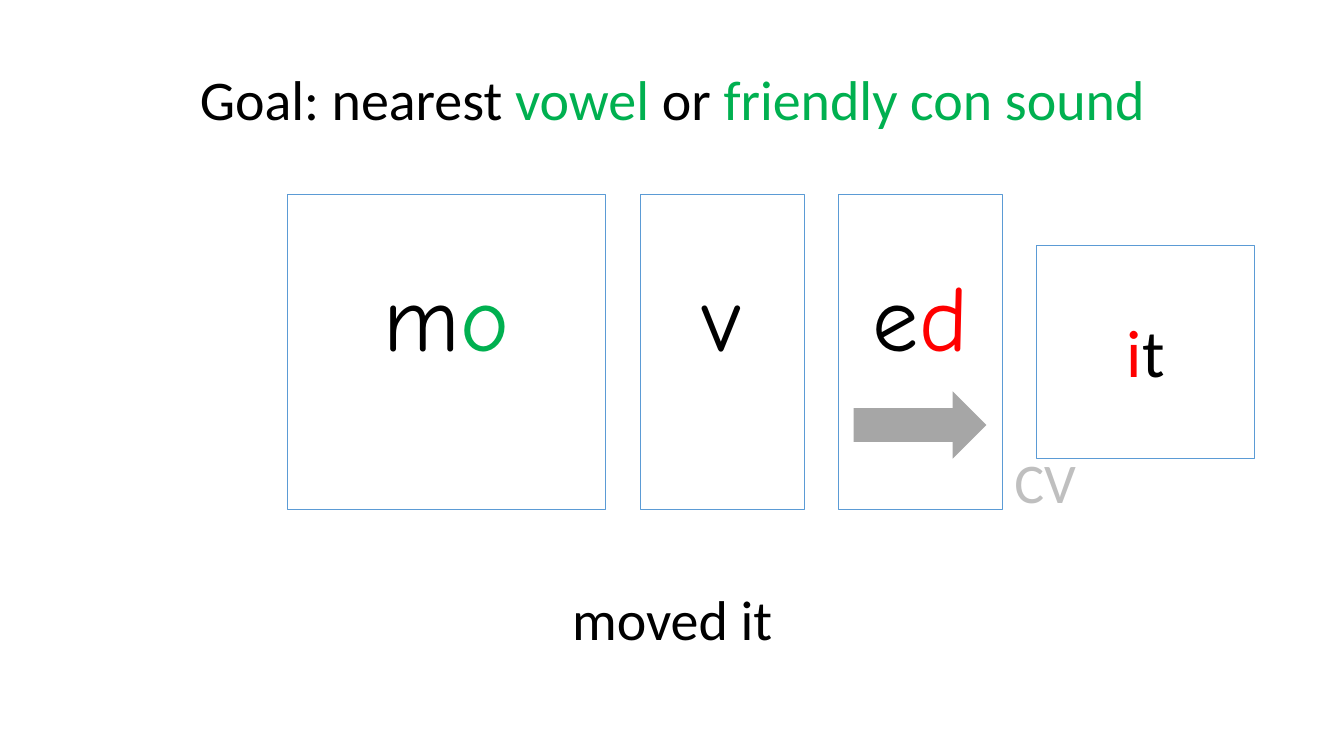
from pptx import Presentation
from pptx.dml.color import RGBColor
from pptx.enum.shapes import MSO_SHAPE
from pptx.enum.text import MSO_ANCHOR, PP_ALIGN
from pptx.util import Cm, Pt

RECTANGLE, RIGHT_ARROW = MSO_SHAPE.RECTANGLE, MSO_SHAPE.RIGHT_ARROW
TOP, CENTER = MSO_ANCHOR.TOP, PP_ALIGN.CENTER

BLACK = RGBColor(0x00, 0x00, 0x00)
GREEN = RGBColor(0x00, 0xB0, 0x50)
RED = RGBColor(0xFF, 0x00, 0x00)
PALE_GRAY = RGBColor(0xBF, 0xBF, 0xBF)
ARROW_GRAY = RGBColor(0xA6, 0xA6, 0xA6)
BORDER_BLUE = RGBColor(0x5B, 0x9B, 0xD5)

PLAIN, LETTERS = "Calibri", "Comic Neue"

# Content: texts are lists of (words, colour); places are left, top, width, height in cm
GOAL = [("Goal: nearest ", BLACK), ("vowel", GREEN),
        (" or ", BLACK), ("friendly con sound", GREEN)]
GOAL_PLACE = (1.8, 1.5, 30.28, 1.96)

# Sound cards: width, height, font, size, text
SOUND_CARDS = [
    (8.03, 7.95, LETTERS, 66, [("m", BLACK), ("o", GREEN)]),
    (4.14, 7.95, LETTERS, 66, [("v", BLACK)]),
    (4.14, 7.95, LETTERS, 66, [("e", BLACK), ("d", RED)]),
    (5.49, 5.38, PLAIN, 48, [("i", RED), ("t", BLACK)]),
]
CARDS_LEFT, CARDS_MIDDLE, CARD_GAP = 7.24, 8.87, 0.86
CARD_TEXT_DROP = 1.64

# The blend label sits clear of the card borders, beside the "ed" card
CAPTIONS = [
    ([("moved it", BLACK)], (12.42, 14.6, 9.04, 1.96)),
    ([("CV", PALE_GRAY)], (23.8, 11.15, 5.08, 1.96)),
]
BLEND_ARROW_PLACE = (21.51, 9.86, 3.35, 1.7)


def lengths(place):
    return [Cm(value) for value in place]


def write(frame, pieces, font, size):
    """Fill a frame with one centred line of coloured pieces."""
    frame.word_wrap = True
    frame.vertical_anchor = TOP
    line = frame.paragraphs[0]
    line.alignment = CENTER
    for words, color in pieces:
        run = line.add_run()
        run.text = words
        run.font.name = font
        run.font.size = Pt(size)
        run.font.color.rgb = color


deck = Presentation()
deck.slide_width, deck.slide_height = Cm(33.87), Cm(19.05)
slide = deck.slides.add_slide(deck.slide_layouts[5])

# Goal as the title
goal = slide.shapes.title
goal.left, goal.top, goal.width, goal.height = lengths(GOAL_PLACE)
write(goal.text_frame, GOAL, PLAIN, 40)

# Row of sound cards, evenly spaced and centred on one height
left = CARDS_LEFT
for width, height, font, size, pieces in SOUND_CARDS:
    place = (left, CARDS_MIDDLE - height / 2, width, height)
    card = slide.shapes.add_shape(RECTANGLE, *lengths(place))
    card.shadow.inherit = False
    card.fill.background()
    card.line.color.rgb = BORDER_BLUE
    card.line.width = Pt(0.75)
    card.text_frame.margin_top = Cm(CARD_TEXT_DROP)
    write(card.text_frame, pieces, font, size)
    left += width + CARD_GAP

# Joined words and the blend label
for pieces, place in CAPTIONS:
    caption = slide.shapes.add_textbox(*lengths(place))
    write(caption.text_frame, pieces, PLAIN, 40)

# Arrow that blends the last sound into the next word
blend_arrow = slide.shapes.add_shape(RIGHT_ARROW, *lengths(BLEND_ARROW_PLACE))
blend_arrow.shadow.inherit = False
blend_arrow.fill.solid()
blend_arrow.fill.fore_color.rgb = ARROW_GRAY
blend_arrow.line.fill.background()

deck.save("out.pptx")
